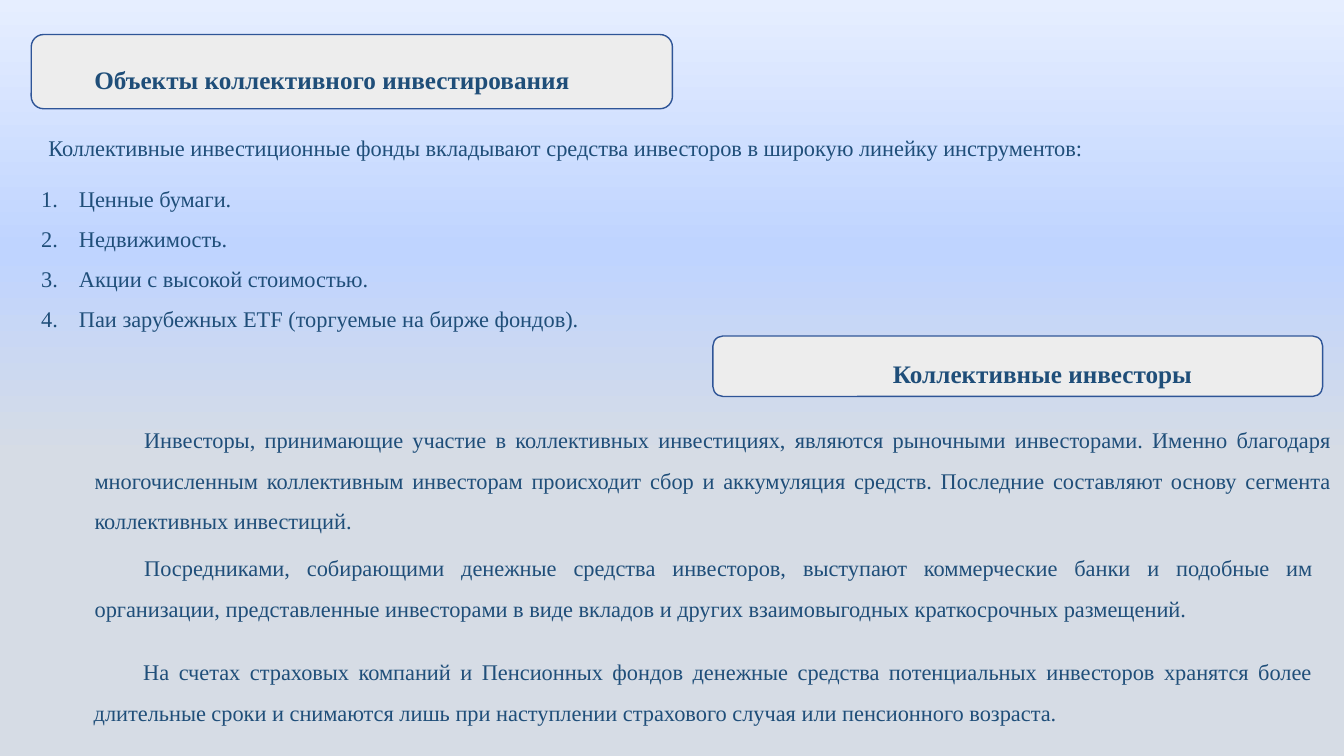
from copy import deepcopy
from lxml import etree
from pptx import Presentation
from pptx.dml.color import RGBColor
from pptx.enum.shapes import MSO_SHAPE
from pptx.enum.text import MSO_ANCHOR, MSO_AUTO_SIZE, PP_ALIGN
from pptx.oxml.ns import qn
from pptx.util import Pt

ROUND = MSO_SHAPE.ROUNDED_RECTANGLE
MIDDLE = MSO_ANCHOR.MIDDLE
GROW = MSO_AUTO_SIZE.SHAPE_TO_FIT_TEXT
JUST, CENTER = PP_ALIGN.JUSTIFY, PP_ALIGN.CENTER


def color(code):
    return RGBColor.from_string(code)


def write(shape, text, size, bold=False, align=JUST, left=0, first=35.4):
    frame = shape.text_frame
    frame.word_wrap = True
    frame.text = text
    for para in frame.paragraphs:
        para.alignment = align
        para.line_spacing = 1.5
        props = para._p.get_or_add_pPr()
        props.set("marL", str(Pt(left)))
        props.set("indent", str(Pt(first)))
        for run in para.runs:
            font = run.font
            font.name = "Times New Roman"
            font.size = Pt(size)
            font.bold = bold
            font.color.rgb = color("1F4E79")
    return frame


prs = Presentation()
prs.slide_width, prs.slide_height = Pt(960), Pt(540)
slide = prs.slides.add_slide(prs.slide_layouts[6])

fill = slide.background.fill
fill.gradient()
fill.gradient_angle = 90
stops = next(slide._element.iter(qn("a:gsLst")))
stops.append(deepcopy(stops[0]))
shades = [(0.39, "D6DCE5"), (0.67, "BFD4FF"), (1, "E6EEFF")]
for stop, (place, code) in zip(fill.gradient_stops, shades):
    stop.position = place
    stop.color.rgb = color(code)

heads = [
    ("Объекты коллективного инвестирования", JUST, 22.3, 24.7, 458, 53),
    ("Коллективные инвесторы", CENTER, 509.2, 240, 435.6, 43.2),
]
for text, align, *area in heads:
    head = slide.shapes.add_shape(ROUND, *map(Pt, area))
    head.shadow.inherit = False
    head.fill.solid()
    head.fill.fore_color.rgb = color("EDEDED")
    head.line.color.rgb = color("2F5597")
    head.line.width = Pt(1)
    write(head, text, 18, True, align).vertical_anchor = MIDDLE

bodies = [
    ("Коллективные инвестиционные фонды вкладывают средства инвесторов в широкую линейку инструментов:",
     -8, 82.8, 836, 33),
    ("Инвесторы, принимающие участие в коллективных инвестициях, являются рыночными инвесторами. "
     "Именно благодаря многочисленным коллективным инвесторам происходит сбор и аккумуляция средств. "
     "Последние составляют основу сегмента коллективных инвестиций.",
     60.5, 291.6, 897.8, 91.4),
    ("Посредниками, собирающими денежные средства инвесторов, выступают коммерческие банки и подобные им "
     "организации, представленные инвесторами в виде вкладов и других взаимовыгодных краткосрочных размещений.",
     60.5, 383, 884.9, 62.6),
    ("На счетах страховых компаний и Пенсионных фондов денежные средства потенциальных инвесторов хранятся более "
     "длительные сроки и снимаются лишь при наступлении страхового случая или пенсионного возраста.",
     59.8, 457.2, 884.9, 62.6),
]
for text, *area in bodies:
    body = slide.shapes.add_textbox(*map(Pt, area))
    write(body, text, 16).auto_size = GROW

items = [
    "Ценные бумаги.",
    "Недвижимость.",
    "Акции с высокой стоимостью.",
    "Паи зарубежных ETF (торгуемые на бирже фондов).",
]
box = slide.shapes.add_textbox(Pt(22.3), Pt(118.8), Pt(480), Pt(120.2))
frame = write(box, "\n".join(items), 16, left=27, first=-27)
frame.auto_size = GROW
for para in frame.paragraphs:
    props = para._p.get_or_add_pPr()
    etree.SubElement(props, qn("a:buFont"), typeface="+mj-lt")
    etree.SubElement(props, qn("a:buAutoNum"), type="arabicPeriod")
    tabs = etree.SubElement(props, qn("a:tabLst"))
    etree.SubElement(tabs, qn("a:tab"), pos=str(Pt(36)), algn="l")

prs.save("out.pptx")
